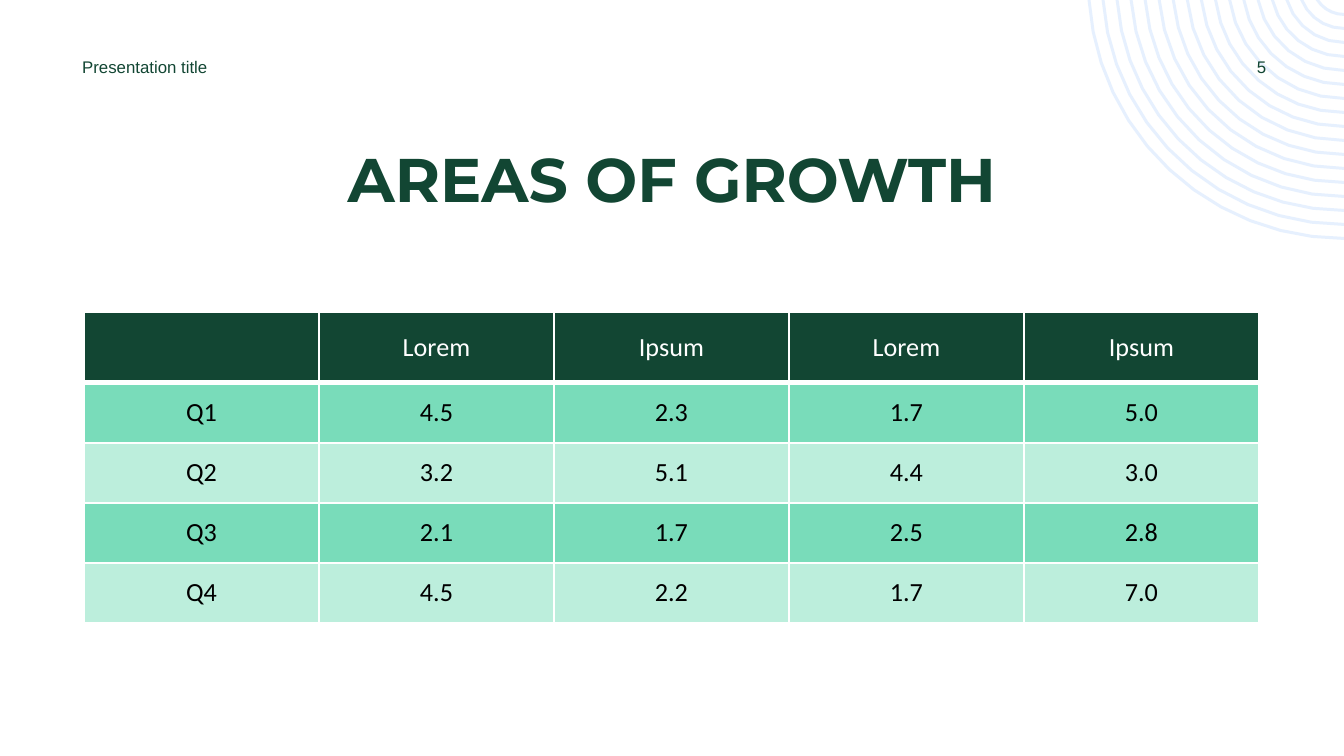
import math

from lxml import etree
from pptx import Presentation
from pptx import util as u
from pptx.dml.color import RGBColor
from pptx.enum import text
from pptx.oxml.ns import qn

EMU_PER_PX = 914400 / 134.4
SLIDE_WIDTH, SLIDE_HEIGHT = 1344, 756

DARK_GREEN = RGBColor(0x12, 0x46, 0x33)
MINT = RGBColor(0x79, 0xDC, 0xBA)
PALE_MINT = RGBColor(0xBC, 0xEE, 0xDC)
PALE_BLUE = RGBColor(0xE6, 0xF0, 0xFE)
WHITE = RGBColor(0xFF, 0xFF, 0xFF)
BLACK = RGBColor(0x00, 0x00, 0x00)

RING_CENTER_Y = -17
RING_RADII = range(33, 258, 14)
RING_WIDTH = 3

ROWS = [
    ["", "Lorem", "Ipsum", "Lorem", "Ipsum"],
    ["Q1", "4.5", "2.3", "1.7", "5.0"],
    ["Q2", "3.2", "5.1", "4.4", "3.0"],
    ["Q3", "2.1", "1.7", "2.5", "2.8"],
    ["Q4", "4.5", "2.2", "1.7", "7.0"],
]
COLUMN_WIDTH, HEADER_HEIGHT, ROW_HEIGHT = 235, 71, 60


def px(length):
    return u.Emu(round(length * EMU_PER_PX))


def place(shape, left, top, width, height):
    shape.left, shape.top = px(left), px(top)
    shape.width, shape.height = px(width), px(height)


def format_text(text_frame, font_name, size, color, align, bold=False):
    paragraph = text_frame.paragraphs[0]
    paragraph.alignment = align
    for run in paragraph.runs:
        run.font.name = font_name
        run.font.size = u.Pt(size)
        run.font.bold = bold
        run.font.color.rgb = color


def arc_points(radius, steps):
    """Points from the slide's top edge down to its right edge."""
    start = math.asin(-RING_CENTER_Y / radius)
    points = []
    for step in range(steps + 1):
        angle = start + (math.pi / 2 - start) * step / steps
        points.append((px(SLIDE_WIDTH - radius * math.cos(angle)),
                       px(RING_CENTER_Y + radius * math.sin(angle))))
    return points


def ring_outline(radius):
    """Outer arc, then inner arc back; larger rings get more points."""
    steps = 4 + radius // 32
    return arc_points(radius, steps) + arc_points(radius - RING_WIDTH, steps)[::-1]


def add_corner_rings(slide):
    outlines = [ring_outline(radius) for radius in RING_RADII]
    builder = slide.shapes.build_freeform(*outlines[0][0])
    for index, outline in enumerate(outlines):
        if index:
            builder.move_to(*outline[0])
        builder.add_line_segments(outline[1:], close=True)
    rings = builder.convert_to_shape()
    rings.shadow.inherit = False
    rings.fill.solid()
    rings.fill.fore_color.rgb = PALE_BLUE
    rings.line.fill.background()


def add_title(slide, title):
    shape = slide.shapes.title
    place(shape, 84, 134, 1176, 85)
    shape.text_frame.text = title
    shape.text_frame.vertical_anchor = text.MSO_ANCHOR.TOP
    format_text(shape.text_frame, "Montserrat", 33, DARK_GREEN,
                text.PP_ALIGN.CENTER, bold=True)


def add_label(slide, label, left, width, align):
    box = slide.shapes.add_textbox(px(left), px(51), px(width), px(31))
    box.text_frame.text = label
    box.text_frame.word_wrap = True
    box.text_frame.vertical_anchor = text.MSO_ANCHOR.MIDDLE
    format_text(box.text_frame, "Arial", 9, DARK_GREEN, align)


def set_borders(cell, top, bottom):
    """White lines; top and bottom widths in points."""
    properties = cell._tc.get_or_add_tcPr()
    for side, width in (("L", 1), ("R", 1), ("T", top), ("B", bottom)):
        line = etree.SubElement(properties, qn(f"a:ln{side}"), w=str(u.Pt(width)))
        fill = etree.SubElement(line, qn("a:solidFill"))
        etree.SubElement(fill, qn("a:srgbClr"), val=str(WHITE))


def format_cell(cell, row_index):
    is_header = row_index == 0
    set_borders(cell, top=3 if row_index == 1 else 1, bottom=3 if is_header else 1)
    cell.fill.solid()
    cell.fill.fore_color.rgb = (DARK_GREEN if is_header
                                else MINT if row_index % 2 else PALE_MINT)
    cell.vertical_anchor = text.MSO_ANCHOR.MIDDLE
    cell.margin_left = cell.margin_right = u.Inches(0.08)
    cell.margin_top = cell.margin_bottom = u.Inches(0.04)
    format_text(cell.text_frame, "Calibri", 14, WHITE if is_header else BLACK,
                text.PP_ALIGN.CENTER)


def add_growth_table(slide):
    heights = [HEADER_HEIGHT] + [ROW_HEIGHT] * (len(ROWS) - 1)
    width = COLUMN_WIDTH * len(ROWS[0])
    table = slide.shapes.add_table(len(ROWS), len(ROWS[0]), px(84), px(312),
                                   px(width), px(sum(heights))).table
    table.horz_banding = False
    for column in table.columns:
        column.width = px(COLUMN_WIDTH)
    for row_index, values in enumerate(ROWS):
        table.rows[row_index].height = px(heights[row_index])
        for column_index, value in enumerate(values):
            cell = table.cell(row_index, column_index)
            cell.text_frame.text = value
            format_cell(cell, row_index)


def main():
    presentation = Presentation()
    presentation.slide_width = px(SLIDE_WIDTH)
    presentation.slide_height = px(SLIDE_HEIGHT)
    slide = presentation.slides.add_slide(presentation.slide_layouts[5])
    add_corner_rings(slide)
    add_title(slide, "AREAS OF GROWTH")
    add_growth_table(slide)
    add_label(slide, "Presentation title", 69, 352, text.PP_ALIGN.LEFT)
    add_label(slide, "5", 1207, 109, text.PP_ALIGN.CENTER)
    presentation.save("out.pptx")


if __name__ == "__main__":
    main()
